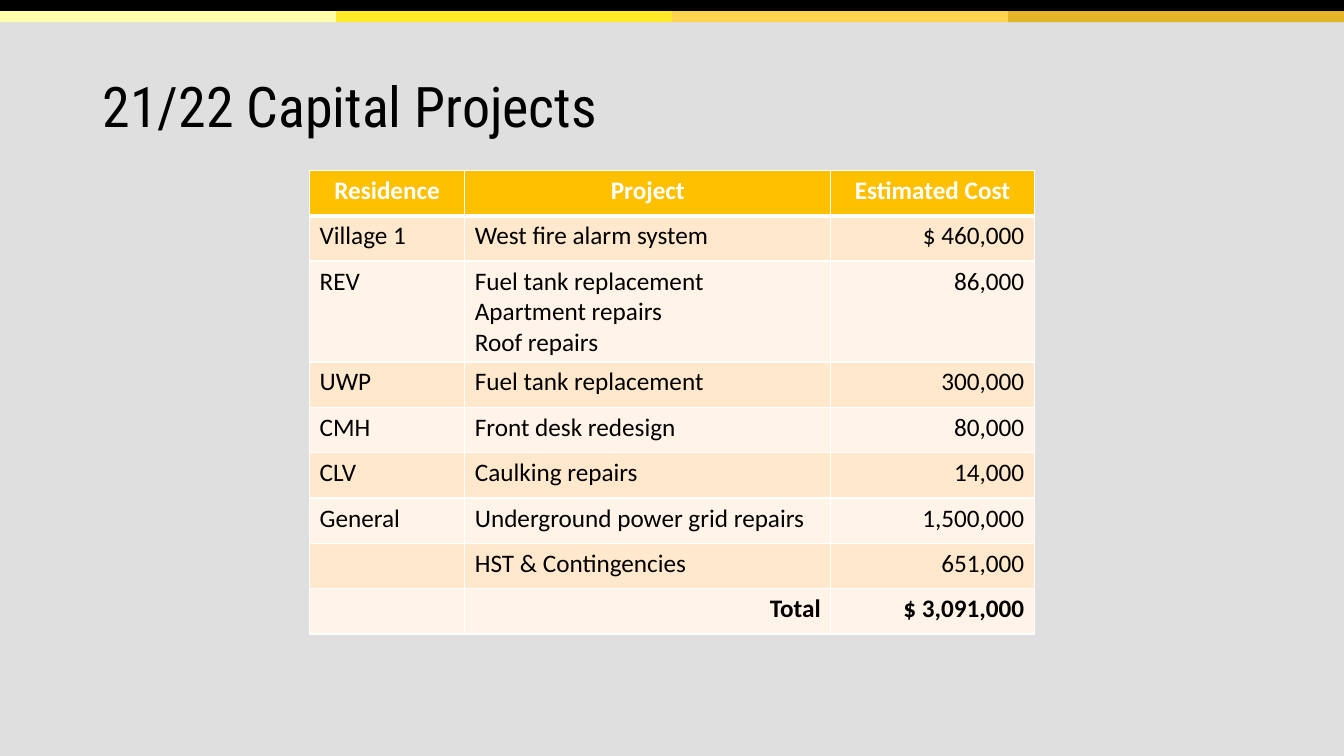
from lxml.etree import SubElement
from pptx import Presentation
from pptx.dml.color import RGBColor
from pptx.enum.shapes import MSO_SHAPE
from pptx.enum.text import MSO_ANCHOR, PP_ALIGN
from pptx.oxml.ns import qn
from pptx.util import Inches, Pt

THEME = {
    "background": "DFDFDF", "ink": "000000", "white": "FFFFFF",
    "stripes": ["FFFFAA", "FFEA29", "FFD54F", "E4B429"],
    "header": "FFC000", "bands": ["FFE8CC", "FFF4E7"],
    "title_font": "Roboto Condensed", "body_font": "Calibri",
    "title_size": 40, "body_size": 18,
}
LEFT, CENTER, RIGHT = PP_ALIGN.LEFT, PP_ALIGN.CENTER, PP_ALIGN.RIGHT


def write(tf, text, font=THEME["body_font"], size=THEME["body_size"],
          color=THEME["ink"], bold=False, align=LEFT, spacing=1.0):
    for i, line in enumerate(text.split("\n")):
        p = tf.paragraphs[0] if i == 0 else tf.add_paragraph()
        p.alignment = align
        p.line_spacing = spacing
        p.font.size = Pt(size)
        if line:
            r = p.add_run()
            r.text = line
            r.font.name = font
            r.font.size = Pt(size)
            r.font.bold = bold
            r.font.color.rgb = RGBColor.from_string(color)


def add_border(cell, side, width):
    ln = SubElement(cell._tc.get_or_add_tcPr(), qn(f"a:{side}"), w=str(Pt(width)))
    fill = SubElement(ln, qn("a:solidFill"))
    SubElement(fill, qn("a:srgbClr"), val=THEME["white"])


prs = Presentation()
prs.slide_width, prs.slide_height = Inches(13.33), Inches(7.5)
W, H = prs.slide_width, prs.slide_height
s = prs.slides.add_slide(prs.slide_layouts[6])
s.background.fill.solid()
s.background.fill.fore_color.rgb = RGBColor.from_string(THEME["background"])

stripe_h = Inches(0.11)
bars = [(0, 0, W, Inches(0.13), THEME["ink"])]
bars += [(i * W // 4, stripe_h, W // 4, stripe_h, color)
         for i, color in enumerate(THEME["stripes"])]
for x, y, w, h, color in bars:
    sp = s.shapes.add_shape(MSO_SHAPE.RECTANGLE, x, y, w, h)
    sp.shadow.inherit = False
    sp.fill.solid()
    sp.fill.fore_color.rgb = RGBColor.from_string(color)
    sp.line.fill.background()

title = s.shapes.add_textbox(Inches(0.92), Inches(0.79), Inches(11.5), Inches(0.6))
tf = title.text_frame
tf.word_wrap = True
tf.vertical_anchor = MSO_ANCHOR.MIDDLE
write(tf, "21/22 Capital Projects", font=THEME["title_font"],
      size=THEME["title_size"], spacing=0.9)

rows = [
    ("Residence", "Project", "Estimated Cost"),
    ("Village 1", "West fire alarm system", "$ 460,000"),
    ("REV", "Fuel tank replacement\nApartment repairs\nRoof repairs", "86,000"),
    ("UWP", "Fuel tank replacement", "300,000"),
    ("CMH", "Front desk redesign", "80,000"),
    ("CLV", "Caulking repairs", "14,000"),
    ("General", "Underground power grid repairs", "1,500,000"),
    ("", "HST & Contingencies", "651,000"),
    ("", "Total", "$ 3,091,000"),
]
col_widths = [1.54, 3.63, 2.02]
row_heights = [0.88 if "\n" in project else 0.45 for _, project, _ in rows]
table = s.shapes.add_table(len(rows), len(col_widths), Inches(3.07), Inches(1.69),
                           Inches(sum(col_widths)), Inches(sum(row_heights))).table
for col, width in zip(table.columns, col_widths):
    col.width = Inches(width)
for row, height in zip(table.rows, row_heights):
    row.height = Inches(height)

for i, row in enumerate(rows):
    header, total = i == 0, i == len(rows) - 1
    for j, text in enumerate(row):
        cell = table.cell(i, j)
        if header:
            align = CENTER
        elif j == 2 or total:
            align = RIGHT
        else:
            align = LEFT
        write(cell.text_frame, text, bold=header or total, align=align,
              color=THEME["white"] if header else THEME["ink"])
        for side in ("lnL", "lnR", "lnT", "lnB"):
            under_header = (i, side) in ((0, "lnB"), (1, "lnT"))
            add_border(cell, side, 3 if under_header else 1)
        cell.fill.solid()
        cell.fill.fore_color.rgb = RGBColor.from_string(
            THEME["header"] if header else THEME["bands"][(i - 1) % 2])

prs.save("out.pptx")
